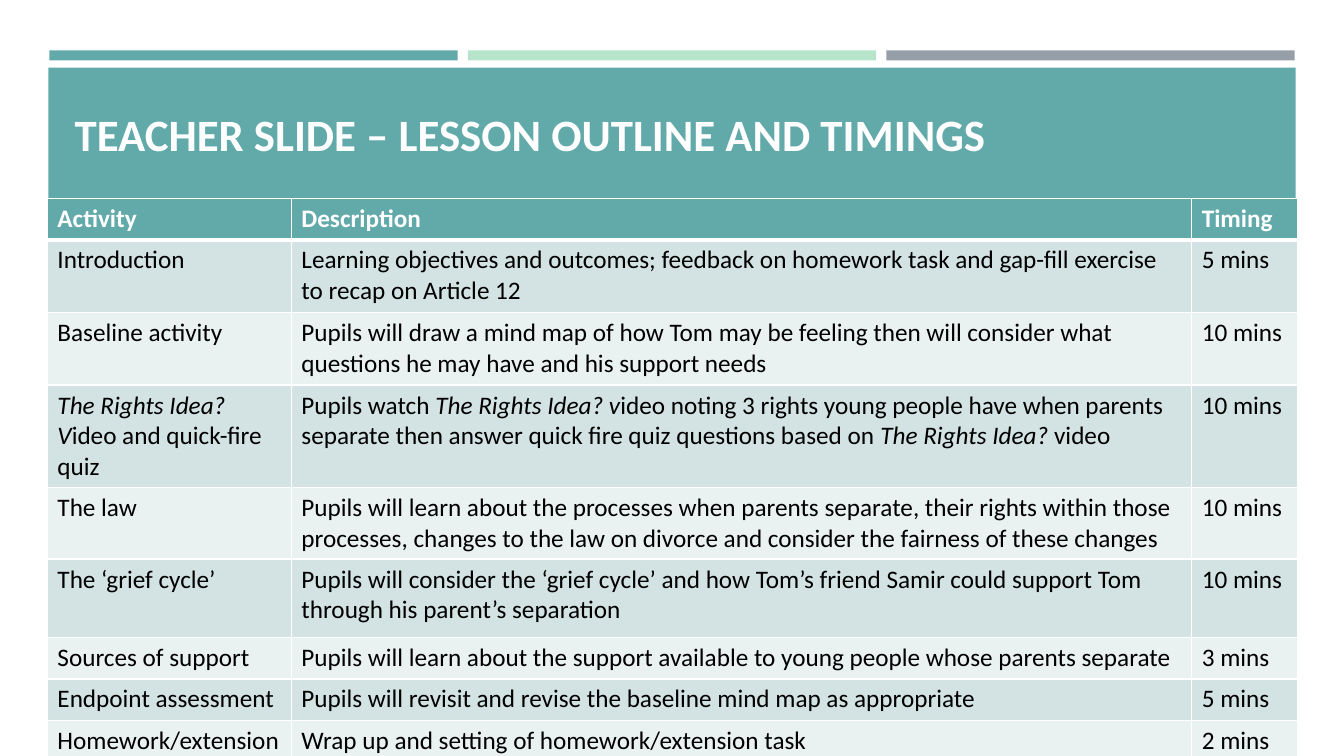
from lxml.etree import SubElement
from pptx import Presentation
from pptx.dml.color import RGBColor
from pptx.enum.shapes import MSO_SHAPE
from pptx.enum.text import MSO_ANCHOR, MSO_AUTO_SIZE, PP_ALIGN
from pptx.oxml.ns import qn
from pptx.util import Inches, Pt

FONT = "Calibri"
WHITE = RGBColor(0xFF, 0xFF, 0xFF)
BLACK = RGBColor(0, 0, 0)
TEAL = RGBColor(0x62, 0xA9, 0xAA)
MINT = RGBColor(0xB7, 0xE5, 0xCB)
GREY = RGBColor(0x96, 0x9F, 0xA7)
BANDS = [RGBColor(0xEA, 0xF1, 0xF1), RGBColor(0xD3, 0xE2, 0xE2)]

TITLE = "TEACHER SLIDE – LESSON OUTLINE AND TIMINGS"
# Asterisks enclose italic words.
ROWS = [
    ("Activity", "Description", "Timing"),
    ("Introduction",
     "Learning objectives and outcomes; feedback on homework task and "
     "gap-fill exercise to recap on Article 12", "5 mins"),
    ("Baseline activity",
     "Pupils will draw a mind map of how Tom may be feeling then will "
     "consider what questions he may have and his support needs", "10 mins"),
    ("*The Rights Idea? V*ideo and quick-fire quiz",
     "Pupils watch *The Rights Idea? v*ideo noting 3 rights young people "
     "have when parents separate then answer quick fire quiz questions "
     "based on *The Rights Idea? *video", "10 mins"),
    ("The law",
     "Pupils will learn about the processes when parents separate, their "
     "rights within those processes, changes to the law on divorce and "
     "consider the fairness of these changes", "10 mins"),
    ("The ‘grief cycle’",
     "Pupils will consider the ‘grief cycle’ and how Tom’s friend Samir "
     "could support Tom through his parent’s separation", "10 mins"),
    ("Sources of support",
     "Pupils will learn about the support available to young people whose "
     "parents separate", "3 mins"),
    ("Endpoint assessment",
     "Pupils will revisit and revise the baseline mind map as appropriate",
     "5 mins"),
    ("Homework/extension",
     "Wrap up and setting of homework/extension task", "2 mins"),
]
WIDTHS = [2.42, 8.93, 1.05]
HEIGHTS = [0.41, 0.72, 0.72, 0.72, 0.7, 0.78, 0.41, 0.41, 0.41]


def add_bar(slide, color, *box):
    bar = slide.shapes.add_shape(MSO_SHAPE.RECTANGLE, *map(Inches, box))
    bar.shadow.inherit = False
    bar.fill.solid()
    bar.fill.fore_color.rgb = color
    bar.line.fill.background()


def add_run(para, text, size, color, bold=False, italic=False):
    run = para.add_run()
    run.text = text
    font = run.font
    font.name, font.size = FONT, Pt(size)
    font.bold, font.italic = bold, italic
    font.color.rgb = color


def add_edges(cell, top, bottom):
    """Draw white cell borders, with top and bottom widths in points."""
    props = cell._tc.get_or_add_tcPr()
    edges = [("L", 1), ("R", 1), ("T", top), ("B", bottom)]
    for at, (side, width) in enumerate(edges):
        line = SubElement(props, qn("a:ln" + side), w=str(Pt(width)))
        fill = SubElement(line, qn("a:solidFill"))
        SubElement(fill, qn("a:srgbClr"), val=str(WHITE))
        props.insert(at, line)


def add_title(slide):
    title = slide.shapes.title
    title.left, title.top = Inches(0.64), Inches(0.77)
    title.width, title.height = Inches(12.06), Inches(1.11)
    frame = title.text_frame
    frame.word_wrap = True
    frame.auto_size = MSO_AUTO_SIZE.NONE
    frame.vertical_anchor = MSO_ANCHOR.MIDDLE
    para = frame.paragraphs[0]
    para.alignment = PP_ALIGN.LEFT
    add_run(para, TITLE, 32, WHITE, bold=True)
    slide.shapes._spTree.append(title._element)  # in front of its band


def add_plan(slide):
    table = slide.shapes.add_table(
        len(ROWS), len(WIDTHS), Inches(0.47), Inches(1.97),
        Inches(sum(WIDTHS)), Inches(sum(HEIGHTS))).table
    for col, width in zip(table.columns, WIDTHS):
        col.width = Inches(width)
    for row, height in zip(table.rows, HEIGHTS):
        row.height = Inches(height)
    for r, texts in enumerate(ROWS):
        head = r == 0
        for c, text in enumerate(texts):
            cell = table.cell(r, c)
            cell.fill.solid()
            cell.fill.fore_color.rgb = TEAL if head else BANDS[r % 2]
            add_edges(cell, 3 if r == 1 else 1, 3 if head else 1)
            para = cell.text_frame.paragraphs[0]
            for i, part in enumerate(text.split("*")):
                if part:
                    add_run(para, part, 18, WHITE if head else BLACK,
                            bold=head, italic=i % 2 == 1)


def main():
    deck = Presentation()
    deck.slide_width, deck.slide_height = Inches(13.33), Inches(7.5)
    slide = deck.slides.add_slide(deck.slide_layouts[5])
    for i, color in enumerate([TEAL, MINT, GREY]):
        add_bar(slide, color, 0.49 + 4.15 * i, 0.5, 4.05, 0.1)
    add_bar(slide, TEAL, 0.48, 0.67, 12.37, 1.3)
    add_title(slide)
    add_plan(slide)
    deck.save("out.pptx")


if __name__ == "__main__":
    main()
